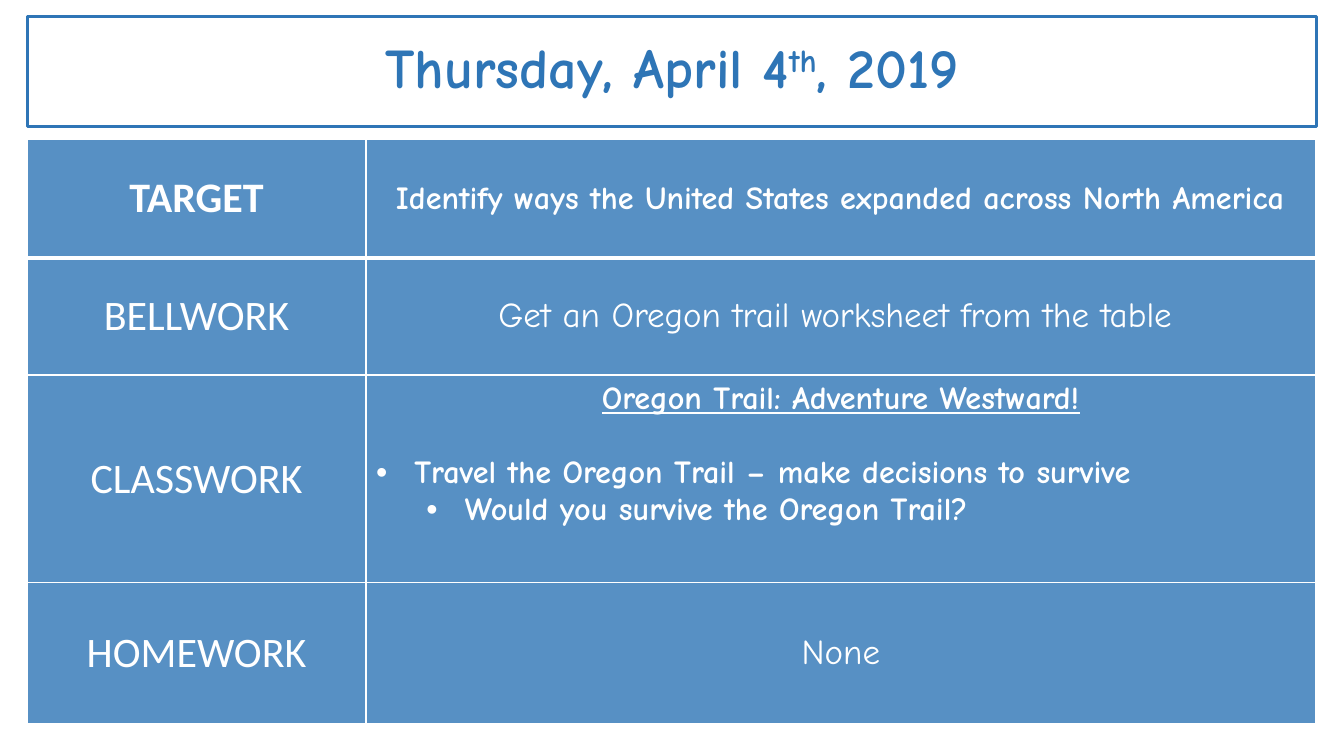
from dataclasses import dataclass
from typing import Optional

import pptx
import pptx.dml.color
import pptx.enum.shapes
import pptx.enum.text
import pptx.oxml
import pptx.oxml.ns
import pptx.util
from pptx.util import Inches

ALIGN = pptx.enum.text.PP_ALIGN
MIDDLE = pptx.enum.text.MSO_ANCHOR.MIDDLE
TOP = pptx.enum.text.MSO_ANCHOR.TOP


@dataclass(frozen=True)
class Theme:
    blue: str = "2E75B6"
    white: str = "FFFFFF"
    label_font: str = "Calibri"
    body_font: str = "Comic Neue"
    title_size: float = 40
    label_size: float = 30
    entry_size: float = 25
    detail_size: float = 23
    detail_gap: float = 26.4
    grid_width: float = 1
    header_width: float = 3
    frame_width: float = 2.25


THEME = Theme()


@dataclass(frozen=True)
class Line:
    text: str
    size: float = THEME.entry_size
    bold: bool = False
    underline: bool = False
    bullet_level: Optional[int] = None
    space_before: float = 0


@dataclass(frozen=True)
class AgendaRow:
    label: str
    height: float
    lines: tuple[Line, ...]
    label_bold: bool = False
    anchor: pptx.enum.text.MSO_ANCHOR = MIDDLE


AGENDA = (
    AgendaRow("TARGET", 1.18, (
        Line("Identify ways the United States expanded across North America",
             THEME.detail_size, bold=True),), label_bold=True),
    AgendaRow("BELLWORK", 1.16, (
        Line("Get an Oregon trail worksheet from the table "),)),
    AgendaRow("CLASSWORK", 2.06, (
        Line("Oregon Trail: Adventure Westward!", THEME.detail_size, bold=True, underline=True),
        Line("Travel the Oregon Trail – make decisions to survive", THEME.detail_size,
             bold=True, bullet_level=0, space_before=THEME.detail_gap),
        Line("Would you survive the Oregon Trail?", THEME.detail_size,
             bold=True, bullet_level=1)), anchor=TOP),
    AgendaRow("HOMEWORK", 1.4, (Line("None"),)),
)
COLUMNS = (3.36, 9.42)
LEFT, WIDTH = 0.27, 12.79
TITLE_TOP, TITLE_HEIGHT, FRAME_HEIGHT = 0.16, 1.0, 1.1
AGENDA_TOP = 1.38


def rgb(color: str) -> pptx.dml.color.RGBColor:
    return pptx.dml.color.RGBColor.from_string(color)


def add_text(paragraph, text: str, *, size: float, font: str = THEME.body_font,
             color: str = THEME.white, bold: bool = False, underline: bool = False,
             baseline: int = 0) -> None:
    run = paragraph.add_run()
    run.text = text
    run.font.name = font
    run.font.size = pptx.util.Pt(size)
    run.font.bold = bold
    run.font.underline = underline
    run.font.color.rgb = rgb(color)
    if baseline:
        run._r.get_or_add_rPr().set("baseline", str(baseline * 1000))


def fill_translucent(fill, properties, color: str, opacity: int) -> None:
    fill.solid()
    fill.fore_color.rgb = rgb(color)
    swatch = properties.find(".//" + pptx.oxml.ns.qn("a:srgbClr"))
    swatch.append(pptx.oxml.parse_xml(
        f'<a:alpha {pptx.oxml.ns.nsdecls("a")} val="{opacity * 1000}"/>'))


def set_borders(properties, top: float, bottom: float) -> None:
    sides = {"L": THEME.grid_width, "R": THEME.grid_width, "T": top, "B": bottom}
    for index, (side, width) in enumerate(sides.items()):
        properties.insert(index, pptx.oxml.parse_xml(
            f'<a:ln{side} {pptx.oxml.ns.nsdecls("a")} w="{pptx.util.Pt(width)}">'
            f'<a:solidFill><a:srgbClr val="{THEME.white}"/></a:solidFill></a:ln{side}>'))


def add_bullet(paragraph, level: int) -> None:
    paragraph.level = level
    properties = paragraph._p.get_or_add_pPr()
    properties.set("marL", str(Inches(0.38 + 0.5 * level)))
    properties.set("indent", str(Inches(-0.38)))
    namespace = pptx.oxml.ns.nsdecls("a")
    properties.append(pptx.oxml.parse_xml(f'<a:buFont {namespace} typeface="Arial"/>'))
    properties.append(pptx.oxml.parse_xml(f'<a:buChar {namespace} char="•"/>'))


def write_lines(frame, lines: tuple[Line, ...], font: str) -> None:
    for index, line in enumerate(lines):
        paragraph = frame.add_paragraph() if index else frame.paragraphs[0]
        if line.bullet_level is None:
            paragraph.alignment = ALIGN.CENTER
        else:
            paragraph.alignment = ALIGN.LEFT
            add_bullet(paragraph, line.bullet_level)
        if line.space_before:
            paragraph.space_before = pptx.util.Pt(line.space_before)
        add_text(paragraph, line.text, size=line.size, font=font,
                 bold=line.bold, underline=line.underline)


def add_date(slide) -> None:
    # Date heading
    date = slide.shapes.title
    date.left, date.top = Inches(LEFT), Inches(TITLE_TOP)
    date.width, date.height = Inches(WIDTH), Inches(TITLE_HEIGHT)
    fill_translucent(date.fill, date._element.spPr, THEME.white, 65)
    frame = date.text_frame
    frame.word_wrap = True
    frame.auto_size = pptx.enum.text.MSO_AUTO_SIZE.NONE
    frame.vertical_anchor = MIDDLE
    paragraph = frame.paragraphs[0]
    paragraph.alignment = ALIGN.CENTER
    for text, baseline in (("Thursday, April 4", 0), ("th", 30), (", 2019", 0)):
        add_text(paragraph, text, size=THEME.title_size, color=THEME.blue,
                 bold=True, baseline=baseline)


def add_date_frame(slide) -> None:
    # Outline around the date
    outline = slide.shapes.add_shape(
        pptx.enum.shapes.MSO_SHAPE.RECTANGLE, Inches(LEFT), Inches(TITLE_TOP),
        Inches(WIDTH), Inches(FRAME_HEIGHT))
    outline.shadow.inherit = False
    outline.fill.background()
    outline.line.color.rgb = rgb(THEME.blue)
    outline.line.width = pptx.util.Pt(THEME.frame_width)


def add_agenda(slide) -> None:
    # Agenda table
    agenda = slide.shapes.add_table(
        len(AGENDA), len(COLUMNS), Inches(LEFT), Inches(AGENDA_TOP), Inches(WIDTH),
        Inches(sum(row.height for row in AGENDA))).table
    for column, width in zip(agenda.columns, COLUMNS):
        column.width = Inches(width)
    for index, row in enumerate(AGENDA):
        agenda.rows[index].height = Inches(row.height)
        label = Line(row.label, THEME.label_size, bold=row.label_bold)
        contents = (((label,), THEME.label_font, MIDDLE),
                    (row.lines, THEME.body_font, row.anchor))
        for cell, (lines, font, anchor) in zip(agenda.rows[index].cells, contents):
            cell.vertical_anchor = anchor
            write_lines(cell.text_frame, lines, font)
            properties = cell._tc.get_or_add_tcPr()
            fill_translucent(cell.fill, properties, THEME.blue, 80)
            set_borders(properties,
                        top=THEME.header_width if index == 1 else THEME.grid_width,
                        bottom=THEME.header_width if index == 0 else THEME.grid_width)


def main() -> None:
    deck = pptx.Presentation()
    deck.slide_width, deck.slide_height = Inches(13.33), Inches(7.5)
    slide = deck.slides.add_slide(deck.slide_layouts.get_by_name("Title Only"))
    add_agenda(slide)
    add_date(slide)
    add_date_frame(slide)
    deck.save("out.pptx")


if __name__ == "__main__":
    main()
